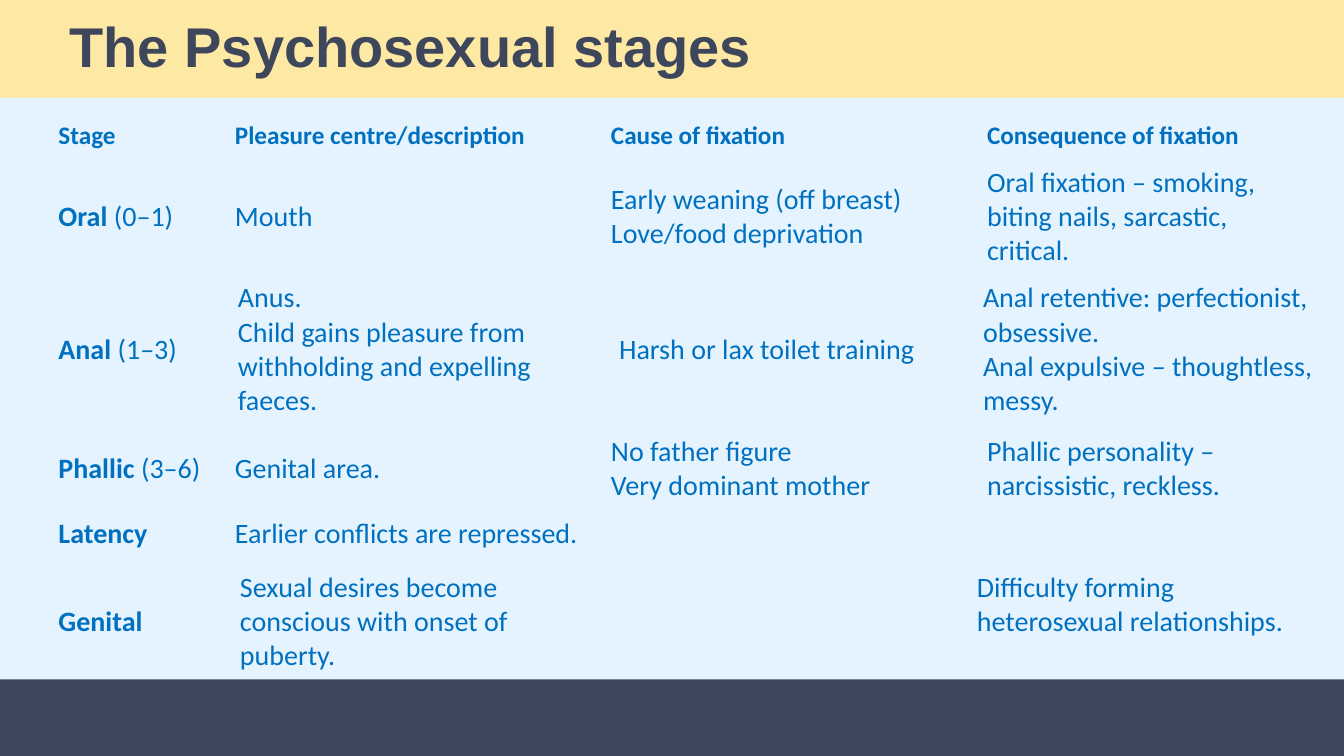
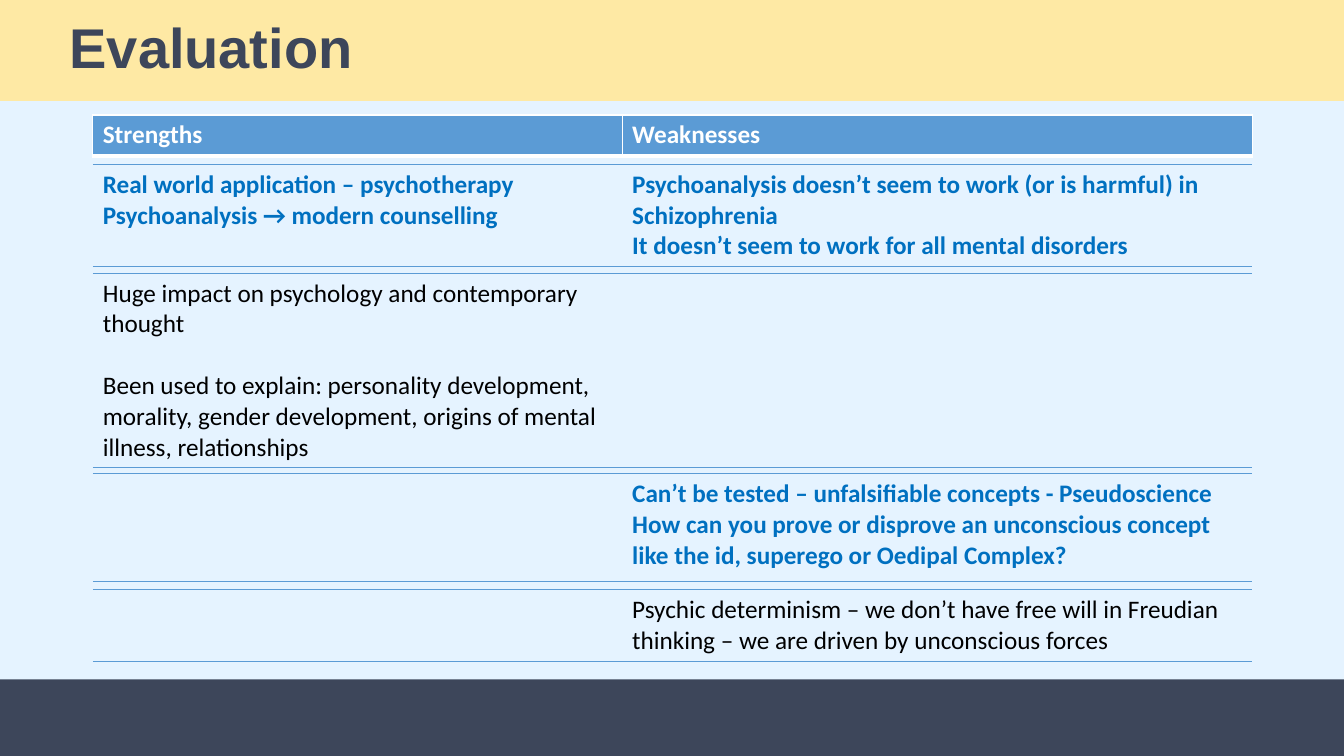
import pptx
import pptx.util
import pptx.dml.color
import pptx.enum.shapes
import pptx.enum.text
from pptx.oxml.ns import qn
from lxml import etree

PX = 9144  # 100 px to the inch
WIDTH, HEIGHT = 1333, 750
COLORS = {
    "sky": "E5F3FF",
    "cream": "FEE9A4",
    "slate": "3D465A",
    "blue": "0070C0",
    "header": "5B9BD5",
    "white": "FFFFFF",
    "black": "000000",
}
NO_GRID_STYLE = "{2D5ABB26-0587-4C30-8999-92F81FD0307C}"
ANCHOR = pptx.enum.text.MSO_ANCHOR

STAGE_LEFT = 48
STAGE_COLS = (175, 373, 373, 337)
STAGE_HEADS = ("Stage", "Pleasure centre/description", "Cause of fixation",
               "Consequence of fixation")
# top, height, column widths, stage, ages, other cells
STAGES = (
    (159, 110, STAGE_COLS, "Oral", " (0–1)",
     ("Mouth", "Early weaning (off breast)\nLove/food deprivation",
      "Oral fixation – smoking, biting nails, sarcastic, critical.")),
    (274, 143, (178, 378, 361, 358), "Anal", " (1–3)",
     ("Anus.\nChild gains pleasure from withholding and expelling faeces.",
      "Harsh or lax toilet training",
      "Anal retentive: perfectionist, obsessive.\n"
      "Anal expulsive – thoughtless, messy.")),
    (426, 77, STAGE_COLS, "Phallic", " (3–6)",
     ("Genital area.", "No father figure\nVery dominant mother",
      "Phallic personality – narcissistic, reckless.")),
    (508, 43, STAGE_COLS, "Latency", "",
     ("Earlier conflicts are repressed.", "", "")),
    (561, 110, (180, 384, 347, 347), "Genital", "",
     ("Sexual desires become conscious with onset of puberty.", "",
      "Difficulty forming heterosexual relationships.")),
)

POINT_LEFT = 92
POINT_COLS = (525, 625)
# top, height, strength, weakness, highlighted, space between paragraphs
POINTS = (
    (163, 100,
     "Real world application – psychotherapy\n"
     "Psychoanalysis → modern counselling",
     "Psychoanalysis doesn’t seem to work (or is harmful) in Schizophrenia\n"
     "It doesn’t seem to work for all mental disorders", True, 0),
    (271, 190,
     "Huge impact on psychology and contemporary thought\n"
     "Been used to explain: personality development, morality, gender "
     "development, origins of mental illness, relationships", "", False, 22),
    (470, 107, "",
     "Can’t be tested – unfalsifiable concepts - Pseudoscience\n"
     "How can you prove or disprove an unconscious concept like the id, "
     "superego or Oedipal Complex?", True, 0),
    (585, 70, "",
     "Psychic determinism – we don’t have free will in Freudian thinking – "
     "we are driven by unconscious forces", False, 0),
)


def px(n):
    return pptx.util.Emu(n * PX)


def rgb(name):
    return pptx.dml.color.RGBColor.from_string(COLORS[name])


def fill(shape, color):
    shape.fill.solid()
    shape.fill.fore_color.rgb = rgb(color)


def put_text(tf, text, lead="", size=18, color="blue", bold=False,
             font="Calibri", gap=0):
    """Write one paragraph per line; lead is a bold start of the first."""
    for i, line in enumerate(text.split("\n")):
        p = tf.add_paragraph() if i else tf.paragraphs[0]
        if i and gap:
            p.space_before = pptx.util.Pt(gap)
        runs = [(line, bold)]
        if lead and not i:
            runs.insert(0, (lead, True))
        for words, strong in runs:
            if not words:
                continue
            r = p.add_run()
            r.text = words
            r.font.name = font
            r.font.size = pptx.util.Pt(size)
            r.font.bold = strong
            r.font.color.rgb = rgb(color)


def add_row_table(s, left, top, height, cols):
    """Add a plain one-row table and return its cells."""
    frame = s.shapes.add_table(1, len(cols), px(left), px(top),
                               px(sum(cols)), px(height))
    frame.element.find(".//" + qn("a:tableStyleId")).text = NO_GRID_STYLE
    table = frame.table
    table.first_row = table.horz_banding = False
    table.rows[0].height = px(height)
    for column, width in zip(table.columns, cols):
        column.width = px(width)
    return list(table.rows[0].cells)


def set_borders(cell, color, **widths):
    """Draw the named sides (L, R, T, B), widths in points."""
    tcPr = cell._tc.get_or_add_tcPr()
    for side in "LRTB":
        if side in widths:
            ln = etree.SubElement(tcPr, qn("a:ln" + side),
                                  w=str(pptx.util.Pt(widths[side])))
            solid = etree.SubElement(ln, qn("a:solidFill"))
            etree.SubElement(solid, qn("a:srgbClr"), val=COLORS[color])


def add_titled_slide(prs, title, band_height):
    s = prs.slides.add_slide(prs.slide_layouts.get_by_name("Title Only"))
    sp = s.shapes.title
    sp.left, sp.top, sp.width, sp.height = map(px, (0, 0, WIDTH, band_height))
    fill(sp, "cream")
    tf = sp.text_frame
    tf.auto_size = pptx.enum.text.MSO_AUTO_SIZE.NONE
    tf.vertical_anchor = ANCHOR.MIDDLE
    tf.margin_left = px(69)
    put_text(tf, title, size=40, color="slate", bold=True, font="Arial")
    p = tf.paragraphs[0]
    p.alignment = pptx.enum.text.PP_ALIGN.LEFT
    p.line_spacing = 0.9
    return s


def style_master(prs, s):
    """Give the master its background and the footer band, drawn through s."""
    master = prs.slide_master
    fill(master.background, "sky")
    band = s.shapes.add_shape(pptx.enum.shapes.MSO_SHAPE.RECTANGLE,
                              px(0), px(674), px(WIDTH), px(78))
    fill(band, "slate")
    band.line.fill.background()
    band.shadow.inherit = False
    master.shapes.element.append(band.element)


def add_stages(s):
    heads = add_row_table(s, STAGE_LEFT, 97, 75, STAGE_COLS)
    for cell, head in zip(heads, STAGE_HEADS):
        cell.vertical_anchor = ANCHOR.MIDDLE
        put_text(cell.text_frame, head, bold=True)
    for top, height, cols, stage, ages, texts in STAGES:
        cells = add_row_table(s, STAGE_LEFT, top, height, cols)
        for cell in cells:
            cell.vertical_anchor = ANCHOR.MIDDLE
        put_text(cells[0].text_frame, ages, lead=stage, size=20)
        for cell, text in zip(cells[1:], texts):
            put_text(cell.text_frame, text, size=20)
    cells[-1].vertical_anchor = ANCHOR.TOP


def add_evaluation(s):
    heads = add_row_table(s, POINT_LEFT, 114, 41, POINT_COLS)
    for cell, head in zip(heads, ("Strengths", "Weaknesses")):
        set_borders(cell, "white", L=1, R=1, T=1, B=3)
        fill(cell, "header")
        put_text(cell.text_frame, head, color="white", bold=True)
    for top, height, strength, weakness, highlighted, gap in POINTS:
        cells = add_row_table(s, POINT_LEFT, top, height, POINT_COLS)
        for cell, text in zip(cells, (strength, weakness)):
            set_borders(cell, "header", T=1, B=1)
            put_text(cell.text_frame, text, bold=highlighted, gap=gap,
                     color="blue" if highlighted else "black")


def main():
    prs = pptx.Presentation()
    prs.slide_width, prs.slide_height = px(WIDTH), px(HEIGHT)
    stages = add_titled_slide(prs, "The Psychosexual stages", 97)
    style_master(prs, stages)
    add_stages(stages)
    add_evaluation(add_titled_slide(prs, "Evaluation", 100))
    prs.save("out.pptx")


if __name__ == "__main__":
    main()
